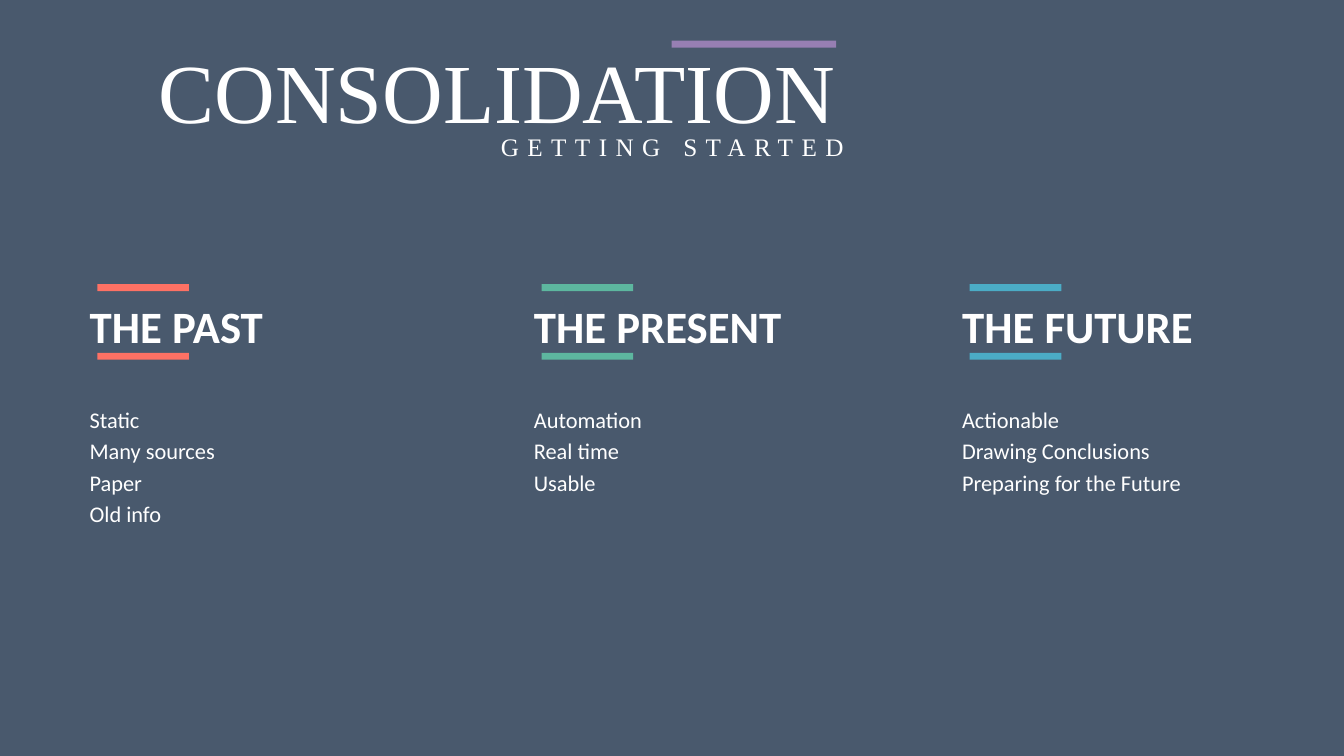
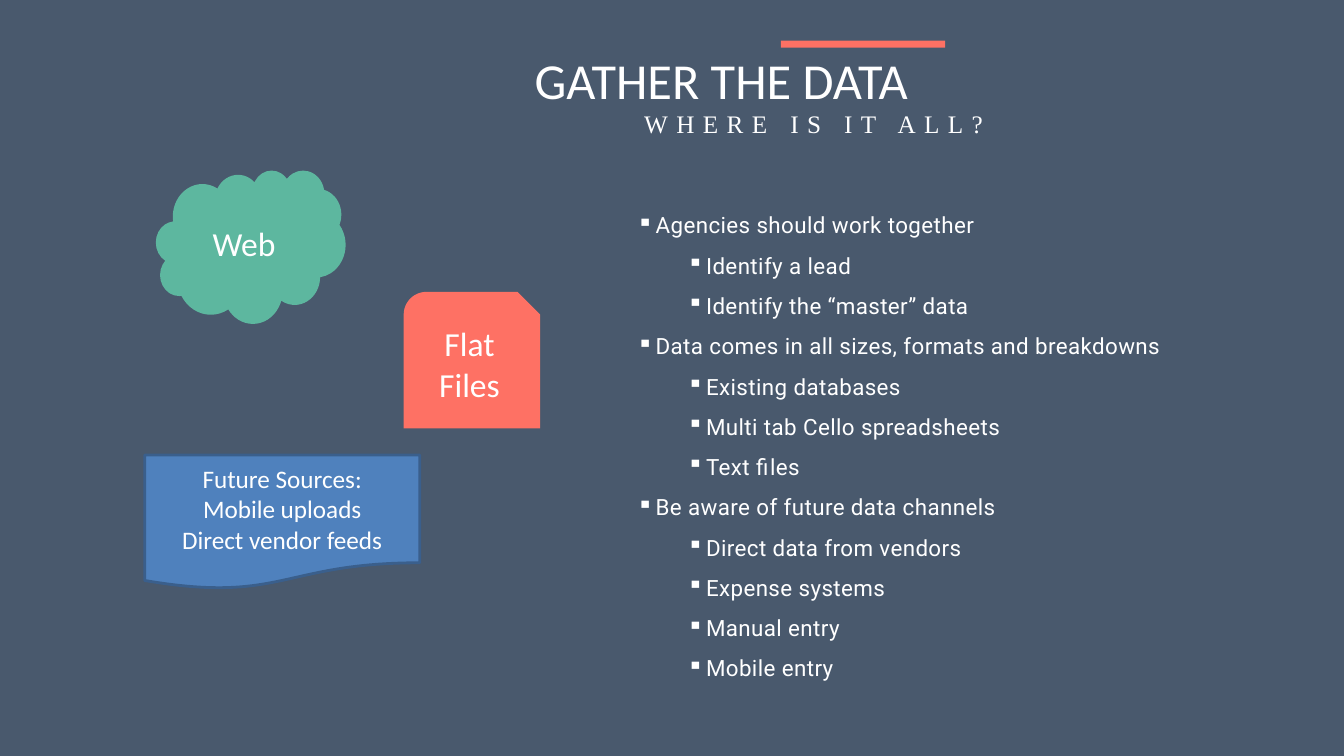
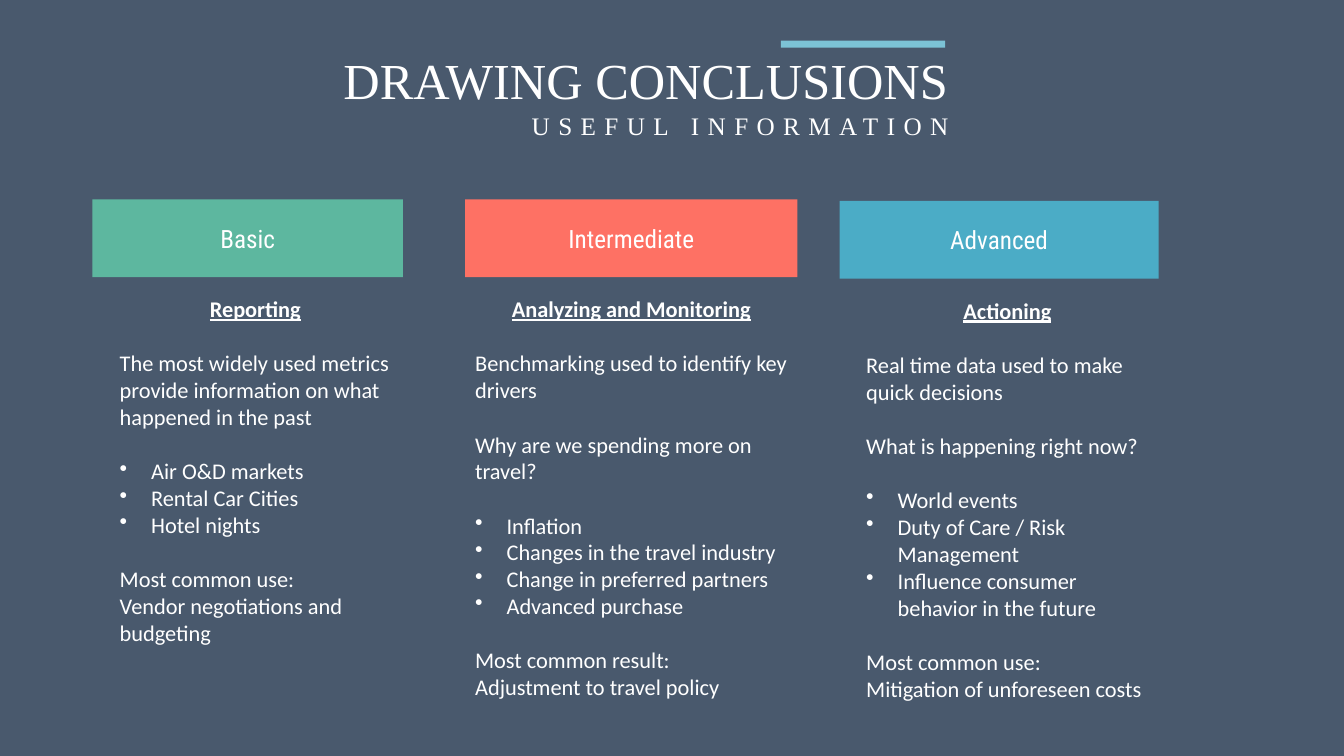
from pptx import Presentation
from pptx.dml.color import RGBColor
from pptx.enum.shapes import MSO_SHAPE
from pptx.enum.text import MSO_ANCHOR, PP_ALIGN
from pptx.oxml.ns import qn
from pptx.util import Pt
from lxml import etree

RECT = MSO_SHAPE.RECTANGLE
CLOUD = MSO_SHAPE.CLOUD
SNIP = MSO_SHAPE.SNIP_ROUND_RECTANGLE
SHEET = MSO_SHAPE.FLOWCHART_DOCUMENT
LEFT, MID = PP_ALIGN.LEFT, PP_ALIGN.CENTER

COLORS = {
    "back": "49596D", "white": "FFFFFF", "purple": "977FB3",
    "coral": "FE7164", "green": "5DB79F", "teal": "4BACC6",
    "sky": "7CC3D6", "blue": "4F81BD", "navy": "3A5F8C",
}
SERIF, SANS = "Times New Roman", "Calibri"
ROBOTO, NARROW = "Roboto", "Roboto Condensed"
BLANK = 6
LINE = 19.5  # height of one 16 pt line

PHASES = [
    (57, "coral", "THE PAST",
     ["Static", "Many sources", "Paper", "Old info"]),
    (374.5, "green", "THE PRESENT", ["Automation", "Real time", "Usable"]),
    (680.5, "teal", "THE FUTURE",
     ["Actionable", "Drawing Conclusions", "Preparing for the Future"]),
]

TOPICS = [
    ("Agencies should work together",
     ["Identify a lead", "Identify the “master” data"]),
    ("Data comes in all sizes, formats and breakdowns",
     ["Existing databases", "Multi tab Cello spreadsheets", "Text files"]),
    ("Be aware of future data channels",
     ["Direct data from vendors", "Expense systems", "Manual entry",
      "Mobile entry"]),
]

# Banner (left, top, width), text (left, width), then (bullet, lines) groups
LEVELS = [
    ("Basic", "green", (66, 142.5, 222), (78.5, 208), "Reporting", [
        ("", ["The most widely used metrics provide information on "
              "what happened in the past"]),
        ("•", ["Air O&D markets", "Rental Car Cities", "Hotel nights"]),
        ("", ["Most common use:", "Vendor negotiations and budgeting"]),
    ]),
    ("Intermediate", "coral", (332.5, 142.5, 237.5), (332.5, 237.5),
     "Analyzing and Monitoring", [
        ("", ["Benchmarking used to identify key drivers"]),
        ("", ["Why are we spending more on travel?"]),
        ("•", ["Inflation", "Changes in the travel industry",
               "Change in preferred partners", "Advanced purchase"]),
        ("", ["Most common result:", "Adjustment to travel policy"]),
    ]),
    ("Advanced", "teal", (600, 143.5, 228), (612, 216), "Actioning", [
        ("", ["Real time data used to make quick decisions"]),
        ("", ["What is happening right now?"]),
        ("•", ["World events", "Duty of Care / Risk Management",
               "Influence consumer behavior in the future"]),
        ("", ["Most common use:", "Mitigation of unforeseen costs"]),
    ]),
]


def rgb(name):
    return RGBColor.from_string(COLORS[name])


def para(frame, text, size, face=SANS, align=LEFT, track=0, lead=0):
    """Add a paragraph; lead is the space before as a percentage."""
    par = frame.paragraphs[0]
    if par.text:
        par = frame.add_paragraph()
    par.text = text
    par.alignment = align
    font = par.font
    font.size, font.name = Pt(size), face
    font.color.rgb = rgb("white")
    props = par._p.get_or_add_pPr()
    if track:
        props.get_or_add_defRPr().set("spc", str(round(track * 100)))
    if lead:
        gap = etree.Element(qn("a:spcBef"))
        etree.SubElement(gap, qn("a:spcPct")).set("val", str(lead * 1000))
        props.insert(0, gap)
    return par


def bullet(par, mark, left, hang):
    props = par._p.get_or_add_pPr()
    props.set("marL", str(Pt(left)))
    props.set("indent", str(Pt(-hang)))
    char = etree.Element(qn("a:buChar"))
    char.set("char", mark)
    props.get_or_add_defRPr().addprevious(char)


def box(slide, left, top, width, height):
    area = slide.shapes.add_textbox(Pt(left), Pt(top), Pt(width), Pt(height))
    area.text_frame.word_wrap = True
    return area.text_frame


def block(slide, left, top, width, height, fill, kind=RECT, edge=None):
    shape = slide.shapes.add_shape(
        kind, Pt(left), Pt(top), Pt(width), Pt(height))
    shape.shadow.inherit = False
    shape.fill.solid()
    shape.fill.fore_color.rgb = rgb(fill)
    if edge:
        shape.line.color.rgb = rgb(edge)
        shape.line.width = Pt(2)
    else:
        shape.line.fill.background()
    frame = shape.text_frame
    frame.vertical_anchor = MSO_ANCHOR.MIDDLE
    return frame


def head(slide, title, sub, bar, fill, size=36, face=SERIF):
    """Title and sub are (text, centre, top); bar is the left edge."""
    text, mid, top = title
    para(box(slide, mid - 359.5, top, 719, 72), text, size, face, MID,
         lead=20)
    text, mid, top = sub
    para(box(slide, mid - 270.5, top, 541, 42), text, 18, SERIF, MID,
         track=6, lead=20)
    block(slide, bar, 29, 117.5, 5, fill)


def phases(slide):
    head(slide, ("CONSOLIDATION", 355, 24.5),
         ("GETTING STARTED", 480.5, 90), 480, "purple", size=60)
    for left, fill, name, lines in PHASES:
        para(box(slide, left, 209.5, 200, 46), name, 32).font.bold = True
        frame = box(slide, left, 286.5, 249, 110)
        for line in lines:
            para(frame, line, 16, lead=20)
        for top in (203, 252):
            block(slide, left + 12.5, top, 65.5, 5, fill)


def sources(slide):
    head(slide, ("GATHER THE DATA", 515.5, 31.5),
         ("WHERE IS IT ALL?", 581.5, 74), 558, "coral", face=SANS)

    # Topic list
    frame = box(slide, 448, 138, 456, 369)
    for topic, points in TOPICS:
        for level, text in [(0, topic)] + [(1, point) for point in points]:
            par = para(frame, text, 16, ROBOTO, track=0.3)
            par.level = level
            par.line_spacing = 1.5
            bullet(par, "▪", 13.5 + 36 * level, 13.5)

    # Kinds of source
    cloud = block(slide, 111.5, 121.5, 135.5, 109.5, "green", CLOUD)
    para(cloud, "Web", 24, align=MID)
    files = block(slide, 288.5, 208.5, 97.5, 97.5, "coral", SNIP)
    para(files, "Flat Files", 24, align=MID)
    sheet = block(slide, 103.5, 325, 196.5, 96, "blue", SHEET, "navy")
    for line in ("Future Sources:", "Mobile uploads", "Direct vendor feeds"):
        para(sheet, line, 18, align=MID)


def levels(slide):
    head(slide, ("DRAWING CONCLUSIONS", 461.5, 31.5),
         ("USEFUL INFORMATION", 529, 75), 558, "sky")
    for name, fill, (left, top, width), (start, span), topic, groups in LEVELS:
        banner = block(slide, left, top, width, 55.5, fill)
        para(banner, name, 18, NARROW, MID)
        frame = box(slide, start, top + 65, span, 310)
        par = para(frame, topic, 16, align=MID)
        par.font.bold = par.font.underline = True
        for mark, lines in groups:
            for pos, line in enumerate(lines):
                par = para(frame, line, 16)
                if pos == 0:
                    par.space_before = Pt(LINE)
                if mark:
                    bullet(par, mark, 22.5, 22.5)


def main():
    deck = Presentation()
    deck.slide_width, deck.slide_height = Pt(960.5), Pt(540)
    back = deck.slide_master.background.fill
    back.solid()
    back.fore_color.rgb = rgb("back")
    for build in (phases, sources, levels):
        build(deck.slides.add_slide(deck.slide_layouts[BLANK]))
    deck.save("out.pptx")


if __name__ == "__main__":
    main()
